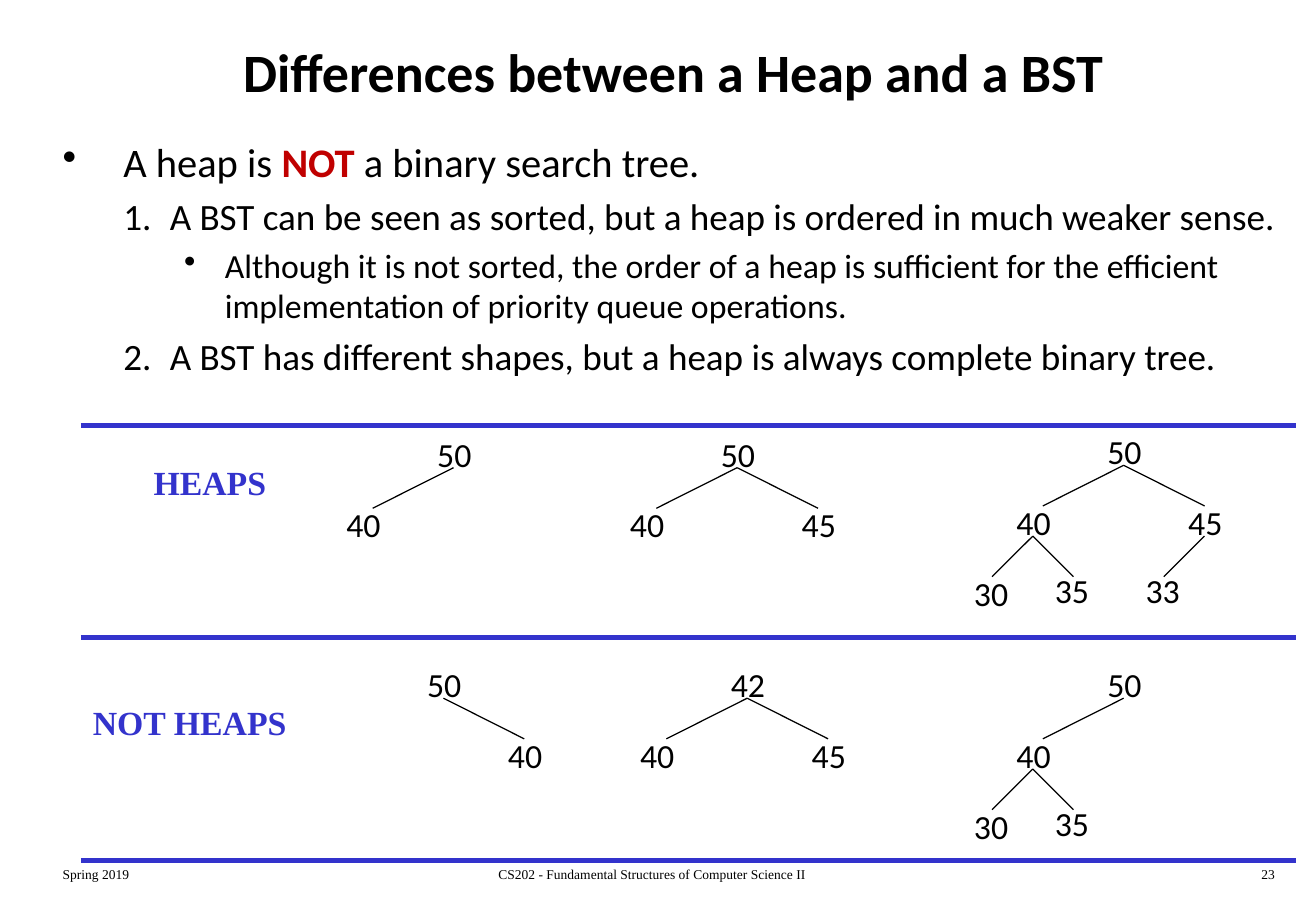
from dataclasses import dataclass
from typing import Optional

import lxml.etree
import pptx
import pptx.dml.color
import pptx.enum.shapes
import pptx.enum.text
import pptx.oxml.ns
import pptx.shapes.shapetree
import pptx.slide
import pptx.text.text
import pptx.util

Cm = pptx.util.Cm
Align = pptx.enum.text.PP_ALIGN
Color = pptx.dml.color.RGBColor


@dataclass(frozen=True)
class Style:
    size: float
    color: Color
    face: str = "Calibri"
    bold: bool = False


@dataclass(frozen=True)
class Theme:
    black: Color = Color(0x00, 0x00, 0x00)
    red: Color = Color(0xC0, 0x00, 0x00)
    blue: Color = Color(0x33, 0x33, 0xCC)
    title: Style = Style(32, black, bold=True)
    levels: tuple[Style, ...] = (Style(24, black), Style(22, black), Style(20, black))
    node: Style = Style(20, black)
    heading: Style = Style(20, blue, "Times New Roman", True)
    footer: Style = Style(8, black, "Times New Roman")
    edge_width: float = 0.75
    rule_width: float = 3


THEME = Theme()


@dataclass(frozen=True)
class Box:
    left: float
    top: float
    width: float
    height: float


@dataclass(frozen=True)
class Label:
    text: str
    box: Box
    style: Style
    align: Align = Align.LEFT
    wrap: bool = True
    middle: bool = False


@dataclass(frozen=True)
class Bullet:
    level: int
    spans: tuple[str, ...]
    numbered: bool = False


@dataclass(frozen=True)
class Node:
    value: int
    left: Optional["Node"] = None
    right: Optional["Node"] = None
    lift: float = 0


@dataclass(frozen=True)
class Branch:
    left_shift: float
    right_shift: float
    reach: float


@dataclass(frozen=True)
class Tree:
    left: float
    top: float
    root: Node


EMPHASIS = "NOT"
INDENTS = ((1.27, -1.27), (2.24, -0.97), (3.39, -0.85))
BRANCHES = (Branch(-1.9, 1.69, 1.69), Branch(-0.89, 0.8, 0.85))
FORK_X, FORK_Y, EDGE_DROP, LEVEL_DROP = 0.59, 0.84, 0.85, 1.48
RULE_TOPS = (8.89, 13.34, 17.99)

LABELS = (
    Label("Spring 2019", Box(1.06, 17.99, 5.74, 0.64), THEME.footer),
    Label("CS202 - Fundamental Structures of Computer Science II",
          Box(8.48, 17.99, 10.31, 0.64), THEME.footer, Align.CENTER),
    Label("23", Box(21.16, 17.99, 5.74, 0.64), THEME.footer, Align.RIGHT),
    Label("Differences between a Heap and a BST",
          Box(1.06, 0.42, 26.04, 2.12), THEME.title, Align.CENTER, middle=True),
    Label("HEAPS", Box(2.96, 9.53, 2.9, 1.12), THEME.heading, wrap=False),
    Label("NOT HEAPS", Box(1.69, 14.55, 4.6, 1.12), THEME.heading, wrap=False),
)

BULLETS = (
    Bullet(0, ("A heap is ", EMPHASIS, " a binary search tree.")),
    Bullet(1, ("A BST can be seen as sorted, but a heap is ordered in much weaker sense.",), True),
    Bullet(2, ("Although it is not sorted, the order of a heap is sufficient for the "
               "efficient implementation of priority queue operations.",)),
    Bullet(1, ("A BST has different shapes, but a heap is always complete binary tree.",), True),
)

PARENT = Node(40, Node(30), Node(35, lift=0.05))
TREES = (
    Tree(8.89, 8.94, Node(50, Node(40))),
    Tree(14.82, 8.94, Node(50, Node(40), Node(45))),
    Tree(22.9, 8.89, Node(50, PARENT, Node(45, Node(33, lift=0.05)))),
    Tree(8.68, 13.76, Node(50, right=Node(40))),
    Tree(15.03, 13.76, Node(42, Node(40), Node(45))),
    Tree(22.9, 13.76, Node(50, PARENT)),
)


def apply_font(font: pptx.text.text.Font, style: Style) -> None:
    font.size = pptx.util.Pt(style.size)
    font.name = style.face
    font.bold = style.bold
    font.color.rgb = style.color


def add_frame(shapes: pptx.shapes.shapetree.SlideShapes, box: Box,
              wrap: bool = True) -> pptx.text.text.TextFrame:
    frame = shapes.add_textbox(Cm(box.left), Cm(box.top), Cm(box.width), Cm(box.height)).text_frame
    frame.word_wrap = wrap
    return frame


def add_label(shapes: pptx.shapes.shapetree.SlideShapes, label: Label) -> None:
    frame = add_frame(shapes, label.box, label.wrap)
    if label.middle:
        frame.vertical_anchor = pptx.enum.text.MSO_ANCHOR.MIDDLE
    para = frame.paragraphs[0]
    para.text = label.text
    para.alignment = label.align
    apply_font(para.font, label.style)


def add_line(shapes: pptx.shapes.shapetree.SlideShapes, start: tuple[float, float],
             end: tuple[float, float], color: Color, width: float) -> None:
    line = shapes.add_connector(pptx.enum.shapes.MSO_CONNECTOR.STRAIGHT,
                                Cm(start[0]), Cm(start[1]), Cm(end[0]), Cm(end[1]))
    line.line.color.rgb = color
    line.line.width = pptx.util.Pt(width)
    lxml.etree.SubElement(line._element.spPr, pptx.oxml.ns.qn("a:effectLst"))


def add_bullets(page: pptx.slide.Slide, box: Box, bullets: tuple[Bullet, ...]) -> None:
    frame = add_frame(page.shapes, box)
    for index, bullet in enumerate(bullets):
        para = frame.add_paragraph() if index else frame.paragraphs[0]
        para.level = bullet.level
        style = THEME.levels[bullet.level]
        margin, indent = INDENTS[bullet.level]
        properties = para._p.get_or_add_pPr()
        properties.set("marL", str(Cm(margin)))
        properties.set("indent", str(Cm(indent)))
        tag, key, value = (("a:buAutoNum", "type", "arabicPeriod") if bullet.numbered
                           else ("a:buChar", "char", "•"))
        lxml.etree.SubElement(properties, pptx.oxml.ns.qn(tag)).set(key, value)
        para.space_before = pptx.util.Pt(style.size * 0.2)
        apply_font(para.font, style)
        for text in bullet.spans:
            span = para.add_run()
            span.text = text
            if text == EMPHASIS:
                span.font.bold = True
                span.font.color.rgb = THEME.red


def add_node(shapes: pptx.shapes.shapetree.GroupShapes, node: Node,
             left: float, top: float, depth: int = 0) -> None:
    box = Box(left, top - node.lift, 1.22, 1.12)
    add_label(shapes, Label(str(node.value), box, THEME.node, wrap=False))
    if depth == len(BRANCHES):
        return
    branch = BRANCHES[depth]
    fork = (left + FORK_X, top + FORK_Y)
    for child, shift, reach in ((node.left, branch.left_shift, -branch.reach),
                                (node.right, branch.right_shift, branch.reach)):
        if child:
            add_line(shapes, fork, (fork[0] + reach, fork[1] + EDGE_DROP),
                     THEME.black, THEME.edge_width)
            add_node(shapes, child, left + shift, top + LEVEL_DROP, depth + 1)


def main() -> None:
    deck = pptx.Presentation()
    deck.slide_width, deck.slide_height = Cm(27.51), Cm(19.05)
    page = deck.slides.add_slide(deck.slide_layouts[6])
    for label in LABELS:
        add_label(page.shapes, label)
    add_bullets(page, Box(1.06, 2.75, 26.46, 5.9), BULLETS)
    for tree in TREES:
        add_node(page.shapes.add_group_shape().shapes, tree.root, tree.left, tree.top)
    for top in RULE_TOPS:
        add_line(page.shapes, (1.69, top), (27.09, top), THEME.blue, THEME.rule_width)
    deck.save("out.pptx")


if __name__ == "__main__":
    main()
